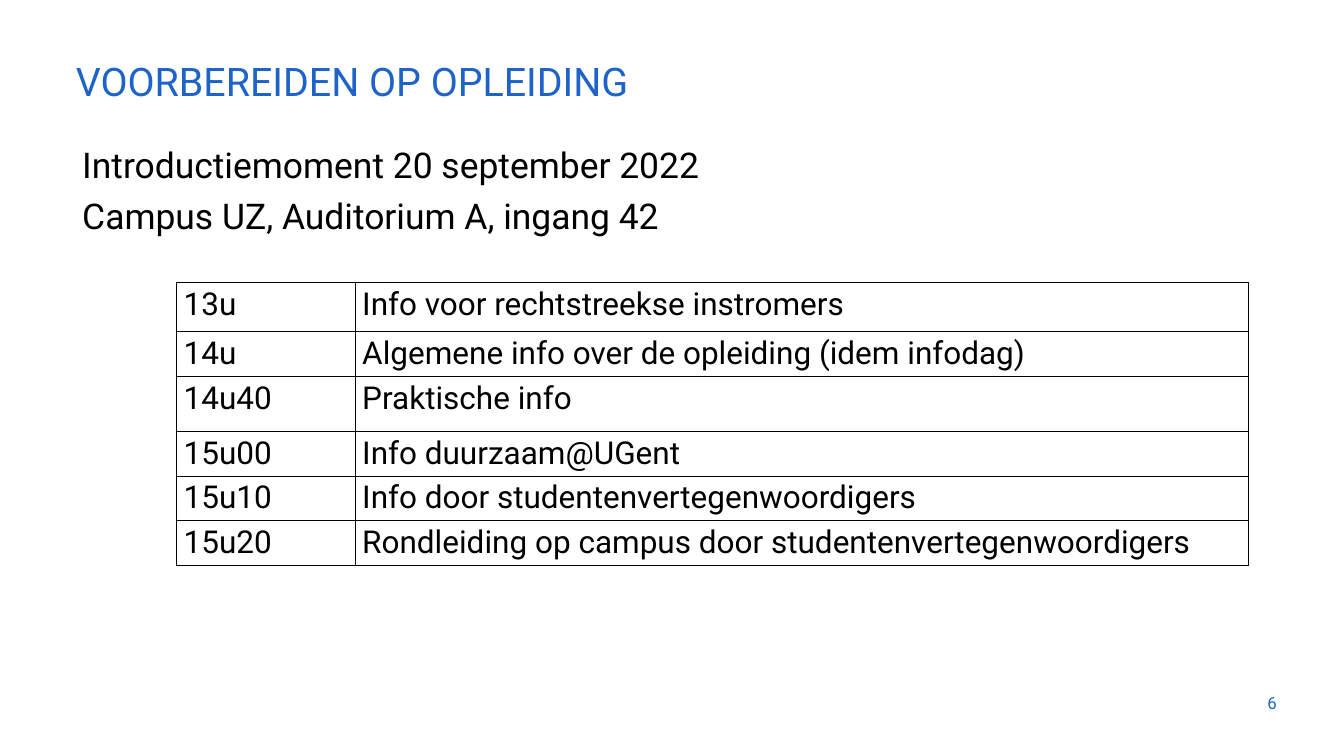
"""Build the programme slide for the introduction day."""
from dataclasses import dataclass

import lxml.etree
import pptx
import pptx.dml.color
import pptx.enum.text
import pptx.oxml.ns
import pptx.util

Inches = pptx.util.Inches
Align = pptx.enum.text.PP_ALIGN
Anchor = pptx.enum.text.MSO_ANCHOR


@dataclass(frozen=True)
class Theme:
    """Fonts, colours and sizes of the slide."""
    font: str = "Roboto"
    blue: str = "1E64C8"
    black: str = "000000"
    title_size: float = 40
    body_size: float = 36
    table_size: float = 32
    number_size: float = 17.1
    border_width: float = 1


THEME = Theme()
INTRODUCTION = ["Introductiemoment 20 september 2022", "Campus UZ, Auditorium A, ingang 42"]
PROGRAMME = [
    ("13u", "Info voor rechtstreekse instromers", 0.69),
    ("14u", "Algemene info over de opleiding (idem infodag)", 0.63),
    ("14u40", "Praktische info", 0.78),
    ("15u00", "Info duurzaam@UGent", 0.63),
    ("15u10", "Info door studentenvertegenwoordigers", 0.63),
    ("15u20", "Rondleiding op campus door studentenvertegenwoordigers", 0.63),
]
COLUMN_WIDTHS = (2.52, 12.6)


def place(shape, left, top, width, height):
    """Move and size a shape, in inches."""
    shape.left, shape.top = Inches(left), Inches(top)
    shape.width, shape.height = Inches(width), Inches(height)


def prepare_frame(frame, anchor):
    """Let the text wrap at a fixed size and set its anchor."""
    frame.word_wrap = True
    frame.auto_size = pptx.enum.text.MSO_AUTO_SIZE.NONE
    frame.vertical_anchor = anchor


def write(paragraph, text, size, color, alignment=Align.LEFT, line_spacing=1.0):
    """Add one formatted run to a paragraph."""
    paragraph.alignment = alignment
    paragraph.line_spacing = line_spacing
    paragraph.space_before = pptx.util.Pt(0)
    run = paragraph.add_run()
    run.text = text
    run.font.name = THEME.font
    run.font.size = pptx.util.Pt(size)
    run.font.color.rgb = pptx.dml.color.RGBColor.from_string(color)


def remove_bullet(paragraph, margin):
    """Turn off the bullet and indent the paragraph."""
    properties = paragraph._p.get_or_add_pPr()
    properties.set("marL", str(Inches(margin)))
    properties.set("indent", "0")
    lxml.etree.SubElement(properties, pptx.oxml.ns.qn("a:buNone"))


def add_title(slide, text):
    """Fill the title placeholder."""
    title = slide.shapes.title
    place(title, 0.97, 0.59, 17.18, 0.94)
    prepare_frame(title.text_frame, Anchor.BOTTOM)
    write(title.text_frame.paragraphs[0], text, THEME.title_size, THEME.blue, line_spacing=0.9)


def add_body(slide, lines):
    """Fill the body placeholder with unbulleted lines."""
    body = slide.placeholders[1]
    place(body, 0.97, 1.85, 17.17, 7.32)
    frame = body.text_frame
    prepare_frame(frame, Anchor.TOP)
    for index, line in enumerate(lines):
        paragraph = frame.add_paragraph() if index else frame.paragraphs[0]
        remove_bullet(paragraph, 0.09)
        write(paragraph, line, THEME.body_size, THEME.black, line_spacing=1.2)


def add_borders(cell):
    """Draw a thin line on each side of a cell."""
    properties = cell._tc.get_or_add_tcPr()
    for position, side in enumerate(("lnL", "lnR", "lnT", "lnB")):
        line = lxml.etree.Element(pptx.oxml.ns.qn(f"a:{side}"))
        line.set("w", str(pptx.util.Pt(THEME.border_width)))
        fill = lxml.etree.SubElement(line, pptx.oxml.ns.qn("a:solidFill"))
        lxml.etree.SubElement(fill, pptx.oxml.ns.qn("a:srgbClr")).set("val", THEME.black)
        properties.insert(position, line)


def add_programme(slide, programme):
    """Add the table of times and activities."""
    height = sum(row[2] for row in programme)
    table = slide.shapes.add_table(
        len(programme), len(COLUMN_WIDTHS), Inches(2.49), Inches(3.99),
        Inches(sum(COLUMN_WIDTHS)), Inches(height)).table
    table.first_row = table.horz_banding = False
    for column, width in zip(table.columns, COLUMN_WIDTHS):
        column.width = Inches(width)
    for row, (time, activity, row_height) in zip(table.rows, programme):
        row.height = Inches(row_height)
        for cell, text in zip(row.cells, (time, activity)):
            cell.fill.background()
            add_borders(cell)
            write(cell.text_frame.paragraphs[0], text, THEME.table_size, THEME.black)


def add_number(slide, number):
    """Add the slide number at the bottom right."""
    box = slide.shapes.add_textbox(Inches(17.1), Inches(9.64), Inches(1.01), Inches(0.57))
    prepare_frame(box.text_frame, Anchor.MIDDLE)
    write(box.text_frame.paragraphs[0], number, THEME.number_size, THEME.blue, Align.RIGHT)


def main():
    """Build and save the presentation."""
    presentation = pptx.Presentation()
    presentation.slide_width, presentation.slide_height = Inches(18.96), Inches(10.67)
    slide = presentation.slides.add_slide(presentation.slide_layouts[1])
    add_title(slide, "VOORBEREIDEN OP OPLEIDING")
    add_body(slide, INTRODUCTION)
    add_number(slide, "6")
    add_programme(slide, PROGRAMME)
    presentation.save("out.pptx")


if __name__ == "__main__":
    main()
